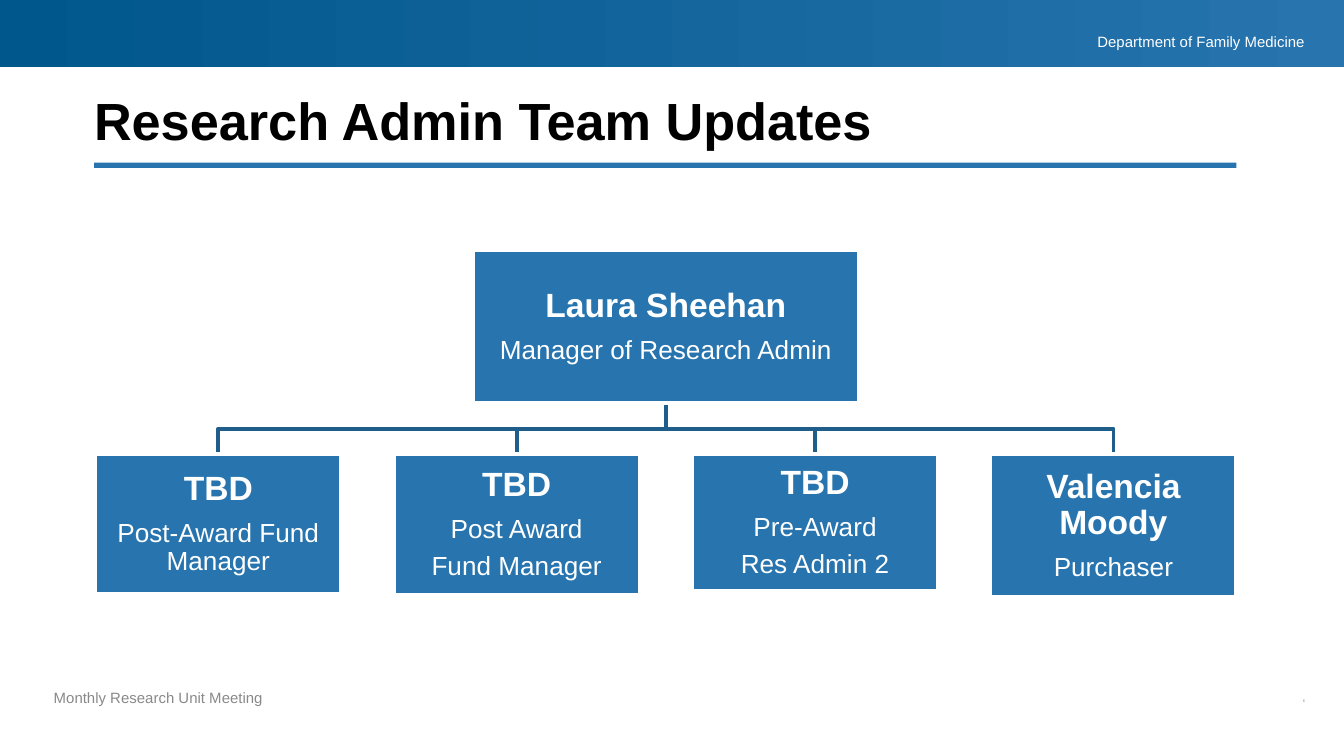
"""Build the research admin team organisation chart slide."""

from dataclasses import dataclass

from pptx import Presentation
from pptx.dml.color import RGBColor
from pptx.enum.shapes import MSO_SHAPE
from pptx.enum.text import MSO_ANCHOR, PP_ALIGN
from pptx.shapes.autoshape import Shape
from pptx.slide import Slide
from pptx.text.text import TextFrame
from pptx.util import Inches, Pt


@dataclass(frozen=True)
class Theme:
    font: str = "Arial"
    blue: str = "2774AE"
    dark_blue: str = "00578B"
    branch: str = "1F5D8B"
    white: str = "FFFFFF"
    black: str = "000000"
    grey: str = "898989"
    title_size: float = 28
    name_size: float = 18
    role_size: float = 14
    small_size: float = 8
    number_size: float = 2
    line_width: float = 2
    line_spacing: float = 0.9
    gap_ratio: float = 0.35


@dataclass(frozen=True)
class Box:
    left: float
    top: float
    width: float
    height: float

    @property
    def center(self) -> float:
        return self.left + self.width / 2

    @property
    def bottom(self) -> float:
        return self.top + self.height

    def lengths(self) -> tuple[int, int, int, int]:
        return Inches(self.left), Inches(self.top), Inches(self.width), Inches(self.height)


@dataclass(frozen=True)
class Member:
    name: str
    roles: tuple[str, ...]
    box: Box


@dataclass(frozen=True)
class Label:
    text: str
    box: Box
    size: float
    color: str
    align: PP_ALIGN = PP_ALIGN.LEFT
    anchor: MSO_ANCHOR = MSO_ANCHOR.TOP
    bold: bool = False
    line_spacing: float = 0.9


THEME = Theme()
REPORT_LEFT, REPORT_TOP, REPORT_WIDTH, REPORT_STEP = 0.71, 3.38, 1.83, 2.22

MANAGER = Member("Laura Sheehan", ("Manager of Research Admin",), Box(3.52, 1.86, 2.87, 1.14))
REPORTS = [
    Member(name, roles, Box(REPORT_LEFT + index * REPORT_STEP, REPORT_TOP, REPORT_WIDTH, height))
    for index, (name, roles, height) in enumerate([
        ("TBD", ("Post-Award Fund Manager",), 1.04),
        ("TBD", ("Post Award", "Fund Manager"), 1.05),
        ("TBD", ("Pre-Award", "Res Admin 2"), 1.02),
        ("Valencia Moody", ("Purchaser",), 1.06),
    ])
]
LABELS = [
    Label("Department of Family Medicine", Box(7.2, 0.24, 2.51, 0.14), THEME.small_size,
          THEME.white, PP_ALIGN.RIGHT, line_spacing=1.0),
    Label("Monthly Research Unit Meeting", Box(0.4, 5.14, 3.9, 0.4), THEME.small_size, THEME.grey),
    Label("6", Box(9.21, 5.2, 0.5, 0.4), THEME.number_size, THEME.grey, PP_ALIGN.RIGHT),
    Label("Research Admin Team Updates", Box(0.7, 0.7, 8.5, 0.43), THEME.title_size,
          THEME.black, anchor=MSO_ANCHOR.BOTTOM, bold=True),
]


def color(value: str) -> RGBColor:
    return RGBColor.from_string(value)


def prepare_frame(frame: TextFrame, anchor: MSO_ANCHOR, inset: float) -> None:
    frame.word_wrap = True
    frame.vertical_anchor = anchor
    frame.margin_left = frame.margin_right = Inches(inset)
    frame.margin_top = frame.margin_bottom = Inches(inset)


def write_paragraph(frame: TextFrame, text: str, size: float, text_color: str, bold: bool,
                    align: PP_ALIGN, line_spacing: float, space_after: float = 0) -> None:
    first = frame.paragraphs[0]
    paragraph = frame.add_paragraph() if first.runs else first
    paragraph.alignment = align
    paragraph.line_spacing = line_spacing
    paragraph.space_after = Pt(space_after)
    run = paragraph.add_run()
    run.text = text
    run.font.name = THEME.font
    run.font.size = Pt(size)
    run.font.bold = bold
    run.font.color.rgb = color(text_color)


def draw_rectangle(slide: Slide, box: Box) -> Shape:
    shape = slide.shapes.add_shape(MSO_SHAPE.RECTANGLE, *box.lengths())
    shape.shadow.inherit = False
    shape.fill.solid()
    shape.fill.fore_color.rgb = color(THEME.blue)
    shape.line.fill.background()
    return shape


def draw_banner(slide: Slide) -> None:
    banner = draw_rectangle(slide, Box(0, 0, 10, 0.5))
    banner.fill.gradient()
    banner.fill.gradient_angle = 0
    for stop, stop_color in zip(banner.fill.gradient_stops, (THEME.dark_blue, THEME.blue)):
        stop.color.rgb = color(stop_color)


def draw_label(slide: Slide, label: Label) -> None:
    frame = slide.shapes.add_textbox(*label.box.lengths()).text_frame
    prepare_frame(frame, label.anchor, 0)
    write_paragraph(frame, label.text, label.size, label.color, label.bold,
                    label.align, label.line_spacing)


def draw_branch(slide: Slide, parent: Box, child: Box) -> None:
    middle = Inches((parent.bottom + child.top) / 2)
    start, end = Inches(parent.center), Inches(child.center)
    builder = slide.shapes.build_freeform(start, Inches(parent.bottom))
    builder.add_line_segments(
        [(start, middle), (end, middle), (end, Inches(child.top))], close=False)
    branch = builder.convert_to_shape()
    branch.shadow.inherit = False
    branch.fill.background()
    branch.line.color.rgb = color(THEME.branch)
    branch.line.width = Pt(THEME.line_width)


def draw_member(slide: Slide, member: Member) -> None:
    shape = draw_rectangle(slide, member.box)
    shape.line.color.rgb = color(THEME.white)
    shape.line.width = Pt(THEME.line_width)
    prepare_frame(shape.text_frame, MSO_ANCHOR.MIDDLE, 0.01)
    lines = [(member.name, THEME.name_size, True)]
    lines += [(role, THEME.role_size, False) for role in member.roles]
    for text, size, bold in lines:
        write_paragraph(shape.text_frame, text, size, THEME.white, bold, PP_ALIGN.CENTER,
                        THEME.line_spacing, size * THEME.gap_ratio)


def main() -> None:
    presentation = Presentation()
    presentation.slide_width = Inches(10)
    presentation.slide_height = Inches(10 * 9 / 16)
    slide = presentation.slides.add_slide(presentation.slide_layouts[6])
    draw_rectangle(slide, Box(0.7, 1.21, 8.5, 0.04))
    draw_banner(slide)
    for label in LABELS:
        draw_label(slide, label)
    for report in REPORTS:
        draw_branch(slide, MANAGER.box, report.box)
    for member in [MANAGER, *REPORTS]:
        draw_member(slide, member)
    presentation.save("out.pptx")


if __name__ == "__main__":
    main()
